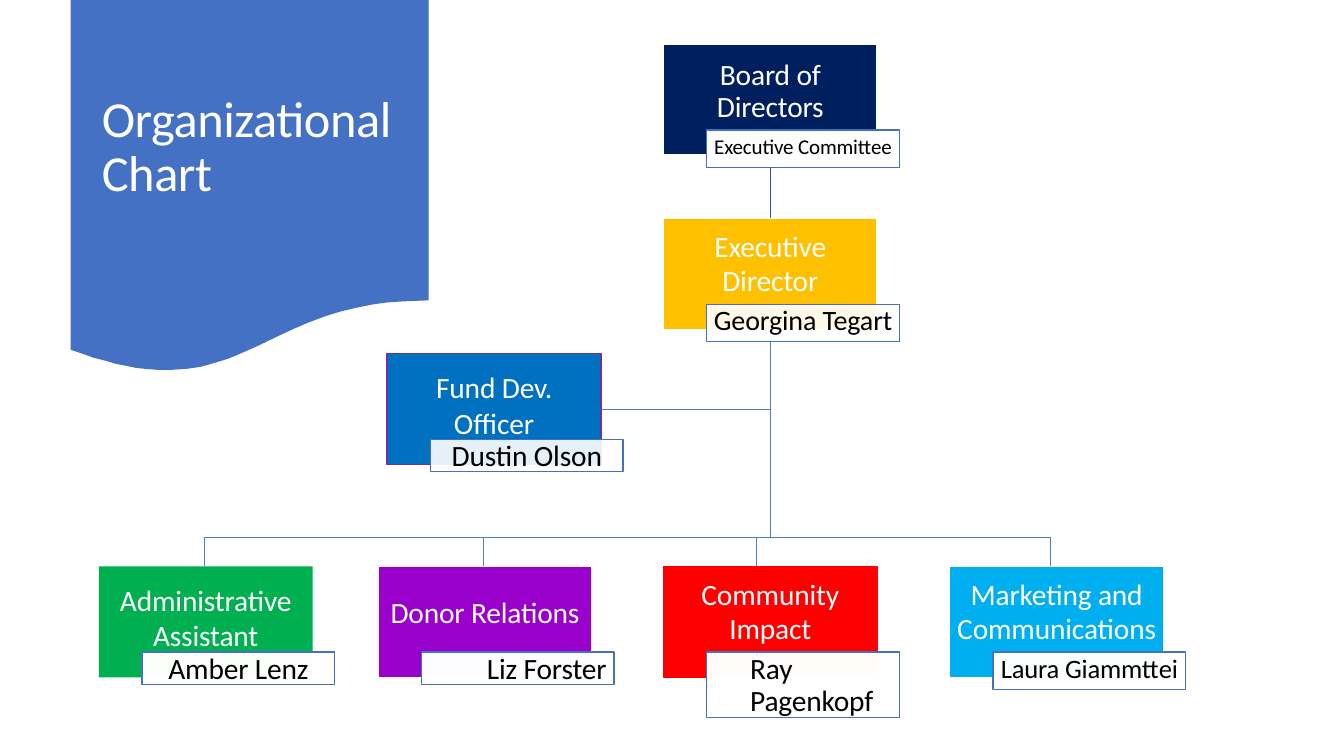
from lxml import etree
from pptx import Presentation
from pptx.dml.color import RGBColor
from pptx.enum.shapes import MSO_CONNECTOR, MSO_SHAPE
from pptx.enum.text import MSO_ANCHOR, PP_ALIGN
from pptx.oxml.ns import qn
from pptx.util import Pt

PX = 9144  # 100 px to the inch
RECT = MSO_SHAPE.RECTANGLE
LINE = MSO_CONNECTOR.STRAIGHT
TOP = MSO_ANCHOR.TOP
LEFT, MID = PP_ALIGN.LEFT, PP_ALIGN.CENTER
WHITE, BLACK, BLUE = "FFFFFF", "000000", "4471C4"
WIRE = "4B7EBC"


def rgb(code):
    return RGBColor.from_string(code)


def put(shape, text, size, color, lead, align, pads, spc=-10):
    """Write text; lead is the line pitch in points, pads are left, top, right in px."""
    frame = shape.text_frame
    frame.word_wrap = True
    frame.vertical_anchor = TOP
    left, top, right = pads
    frame.margin_left, frame.margin_top = left * PX, top * PX
    frame.margin_right, frame.margin_bottom = right * PX, 0
    frame.text = text
    for para in frame.paragraphs:
        para.alignment = align
        para.line_spacing = Pt(lead)
        for run in para.runs:
            run.font.name = "Calibri"
            run.font.size = Pt(size)
            run.font.color.rgb = rgb(color)
            run.font._element.set("spc", str(spc))


prs = Presentation()
prs.slide_width, prs.slide_height = 1333 * PX, 750 * PX
slide = prs.slides.add_slide(prs.slide_layouts[6])
shapes = slide.shapes

# Banner with a wavy lower edge
wave = [(70, 347), (82, 351), (93, 355), (105, 358), (115, 361), (125, 363),
        (135, 365), (144, 366), (157, 367), (169, 367), (185, 366), (199, 364),
        (213, 360), (226, 356), (238, 351), (254, 344), (279, 332), (292, 326),
        (306, 320), (322, 314), (338, 309), (355, 305), (370, 302), (385, 300),
        (401, 299), (425, 298)]
path = shapes.build_freeform(425, 0, scale=PX)
path.add_line_segments([(70, 0)] + wave, close=True)
banner = path.convert_to_shape()
banner.shadow.inherit = False
banner.fill.solid()
banner.fill.fore_color.rgb = rgb(BLUE)
banner.line.fill.background()

title = shapes.add_textbox(100 * PX, 84 * PX, 291 * PX, 117 * PX)
put(title, "Organizational Chart", 36, WHITE, 38.9, LEFT, (1, 8, 0), -30)

# x, y, fill, edge, role, lead, side pad, top pad
roles = [
    (658, 44, "001F5F", WHITE, "Board of Directors", 23.2, 45, 14),
    (658, 217, "FFC000", WHITE, "Executive\nDirector", 24.2, 5, 11),
    (384, 351, "0070C0", "7030A0", "Fund Dev. Officer", 25.4, 45, 15),
    (98, 562, "00AF50", None, "Administrative Assistant", 25.4, 5, 15),
    (375, 562, "9900CC", WHITE, "Donor Relations", 25.4, 5, 27),
    (658, 562, "FF0000", "FF0000", "Community\nImpact", 24.2, 5, 11),
    (942, 562, "00AFEF", WHITE, "Marketing and\nCommunications", 24.2, 5, 11),
]
# name, size, lead, height, opacity, align, left pad, top pad
people = [
    ("Executive Committee", 15, 18.3, 37, 99, MID, 0, 3),
    ("Georgina Tegart", 20, 22.4, 37, 90, MID, 0, 0),
    ("Dustin Olson", 21, 23.4, 32, 90, MID, 0, 0),
    ("Amber Lenz", 21, 23.4, 32, 99, MID, 0, 0),
    ("Liz Forster", 21, 23.4, 32, 99, LEFT, 65, 0),
    ("Ray Pagenkopf", 21, 23.4, 65, 99, LEFT, 43, 0),
    ("Laura Giammttei", 19, 22.4, 37, 99, MID, 0, 0),
]
for role, person in zip(roles, people):
    x, y, fill, edge, label, lead, side, top = role
    box = shapes.add_shape(RECT, x * PX, y * PX, 212 * PX, 110 * PX)
    box.shadow.inherit = False
    box.fill.solid()
    box.fill.fore_color.rgb = rgb(fill)
    if edge:
        box.line.color.rgb = rgb(edge)
        box.line.width = Pt(1)
    else:
        box.line.fill.background()
    put(box, label, 21, WHITE, lead, MID, (side, top, side))

    name, size, lead, high, alpha, align, left, top = person
    tag = shapes.add_shape(RECT, (x + 43) * PX, (y + 85) * PX, 191 * PX, high * PX)
    tag.shadow.inherit = False
    tag.fill.solid()
    tag.fill.fore_color.rgb = rgb(WHITE)
    tint = tag.fill._xPr.find(".//" + qn("a:srgbClr"))
    etree.SubElement(tint, qn("a:alpha"), val=str(alpha * 1000))
    tag.line.color.rgb = rgb(BLUE)
    tag.line.width = Pt(1)
    put(tag, name, size, BLACK, lead, align, (left, top, 0))

# Reporting lines: trunk, side branch, bar and drops
wires = [
    (764, 166, 764, 216, "34589C", 1),
    (764, 338, 764, 533, WIRE, 0.75),
    (764, 406, 596, 406, WIRE, 0.75),
    (203, 533, 1042, 533, WIRE, 0.75),
]
wires += [(x, 562, x, 533, WIRE, 0.75) for x in (203, 480, 750, 1042)]
for x1, y1, x2, y2, color, width in wires:
    wire = shapes.add_connector(LINE, x1 * PX, y1 * PX, x2 * PX, y2 * PX)
    wire.line.color.rgb = rgb(color)
    wire.line.width = Pt(width)
    etree.SubElement(wire._element.spPr, qn("a:effectLst"))

prs.save("out.pptx")
